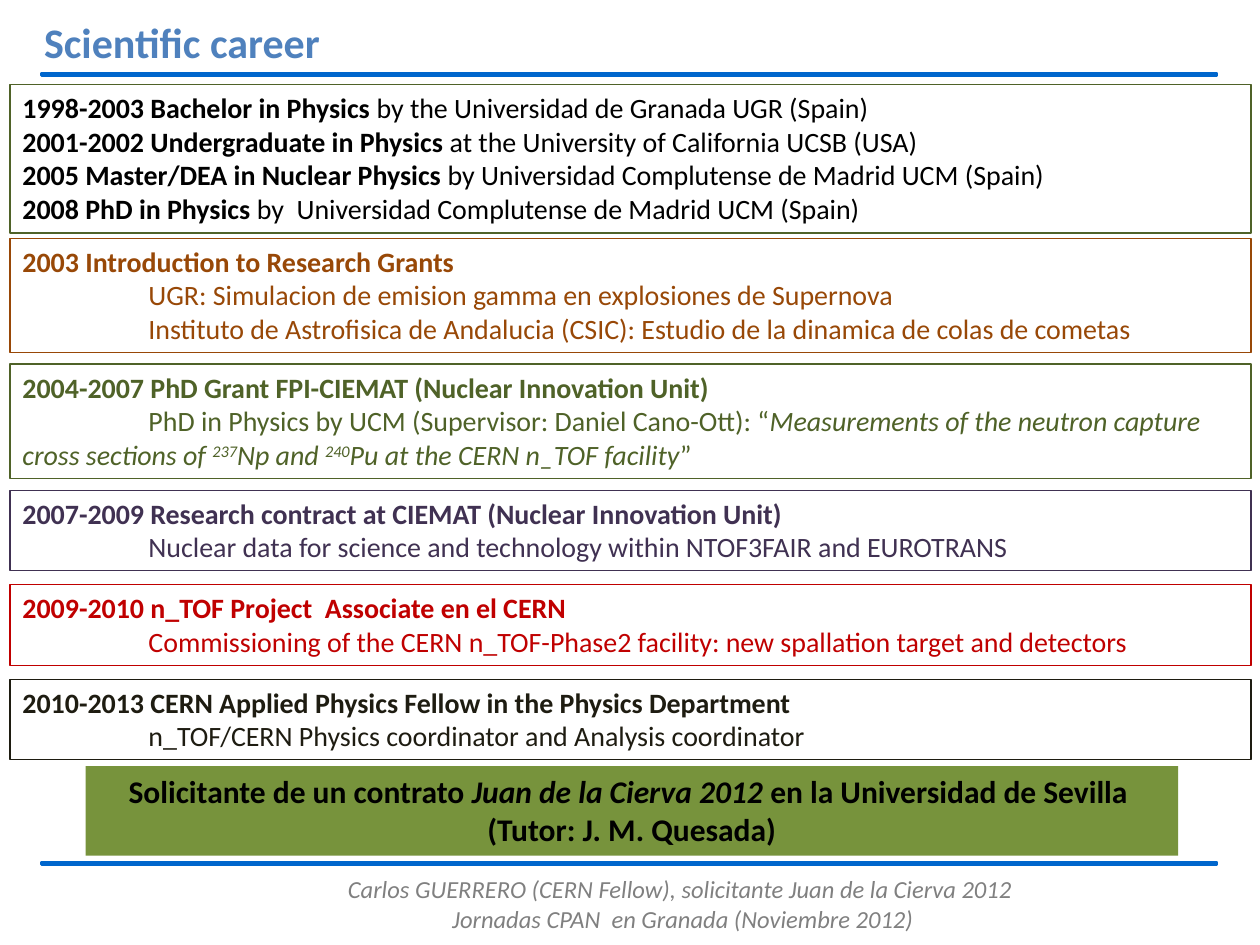
import pptx
import pptx.dml.color
import pptx.enum.shapes
import pptx.enum.text
import pptx.util

COLOURS = {
    "title": "4F81BD", "rule": "0066CC", "footer": "808080", "black": "000000",
    "green": "4F6228", "brown": "984807", "purple": "403152", "red": "C00000",
    "dark": "1E1C11", "banner": "77933C",
}
FORMATS = {
    "plain": {},
    "bold": {"bold": True},
    "italic": {"italic": True},
    "bold italic": {"bold": True, "italic": True},
    "raised": {"italic": True, "raised": True},
}
LEFT, CENTRE = pptx.enum.text.PP_ALIGN.LEFT, pptx.enum.text.PP_ALIGN.CENTER
RECTANGLE = pptx.enum.shapes.MSO_SHAPE.RECTANGLE

deck = pptx.Presentation()
deck.slide_width = pptx.util.Inches(10)
deck.slide_height = pptx.util.Inches(7.5)
page = deck.slides.add_slide(deck.slide_layouts[5])


def place(left, top, width, height):
    """Turn percentages of the slide's size into lengths."""
    sides = (deck.slide_width, deck.slide_height) * 2
    return [int(side * share / 100)
            for side, share in zip(sides, (left, top, width, height))]


def write(box, paragraphs, size, colour, align=LEFT, indented=False):
    """Fill a box with paragraphs of (text, format) spans; indent all but the first."""
    frame = box.text_frame
    frame.word_wrap = True
    frame.vertical_anchor = pptx.enum.text.MSO_ANCHOR.TOP
    for index, spans in enumerate(paragraphs):
        para = frame.add_paragraph() if index else frame.paragraphs[0]
        para.alignment = align
        para.space_before = pptx.util.Pt(0)
        if indented and index:
            para._p.get_or_add_pPr().set("indent", str(pptx.util.Inches(1)))
        for text, style in spans:
            span = para.add_run()
            span.text = text
            values = {"name": "Calibri", "size": pptx.util.Pt(size),
                      "bold": False, "italic": False} | FORMATS[style]
            if values.pop("raised", False):
                span.font._element.set("baseline", "30000")
            for attribute, value in values.items():
                setattr(span.font, attribute, value)
            span.font.color.rgb = pptx.dml.color.RGBColor.from_string(COLOURS[colour])


# Rules above and below the career boxes
for top in (7.73, 91.2):
    rule = page.shapes.add_shape(RECTANGLE, *place(3.3, top, 93.3, 0.27))
    rule.shadow.inherit = False
    rule.fill.solid()
    rule.fill.fore_color.rgb = pptx.dml.color.RGBColor.from_string(COLOURS["rule"])
    rule.line.color.rgb = pptx.dml.color.RGBColor.from_string(COLOURS["rule"])
    rule.line.width = pptx.util.Pt(1.5)

title = page.shapes.title
title.left, title.top, title.width, title.height = place(2.5, 1.07, 96.7, 6.67)
write(title, [[("Scientific career", "bold")]], 24, "title")

footer = page.shapes.add_textbox(*place(14.2, 91.87, 80, 8.27))
write(footer, [
    [("Carlos GUERRERO (CERN Fellow), solicitante Juan de la Cierva 2012 ", "italic")],
    [("Jornadas CPAN  en Granada (Noviembre 2012)", "italic")],
], 14, "footer", CENTRE)

# Top, height, line colour, text colour, indented, paragraphs
career = [
    (8.93, 15.73, "green", "black", False, [
        [("1998-2003 Bachelor in Physics", "bold"),
         (" by the Universidad de Granada UGR (Spain)", "plain")],
        [("2001-2002 Undergraduate in Physics", "bold"),
         (" at the University of California UCSB (USA)", "plain")],
        [("2005 Master/DEA in Nuclear Physics ", "bold"),
         ("by Universidad Complutense de Madrid UCM (Spain)", "plain")],
        [("2008 PhD in Physics ", "bold"),
         ("by  Universidad Complutense de Madrid UCM (Spain)", "plain")],
    ]),
    (25.2, 12.13, "brown", "brown", True, [
        [("2003 Introduction to Research Grants", "bold")],
        [("UGR: Simulacion de emision gamma en explosiones de Supernova", "plain")],
        [("Instituto de Astrofisica de Andalucia (CSIC): "
          "Estudio de la dinamica de colas de cometas", "plain")],
    ]),
    (38.53, 12.13, "green", "green", True, [
        [("2004-2007 PhD Grant FPI-CIEMAT (Nuclear Innovation Unit)", "bold")],
        [("PhD in Physics by UCM (Supervisor: Daniel Cano-Ott): “", "plain"),
         ("Measurements of the neutron capture cross sections of ", "italic"),
         ("237", "raised"), ("Np and ", "italic"),
         ("240", "raised"), ("Pu at the CERN n_TOF facility", "italic"),
         ("”", "plain")],
    ]),
    (51.87, 8.53, "purple", "purple", True, [
        [("2007-2009 Research contract at CIEMAT (Nuclear Innovation Unit)", "bold")],
        [("Nuclear data for science and technology within NTOF3FAIR and EUROTRANS",
          "plain")],
    ]),
    (61.87, 8.53, "red", "red", True, [
        [("2009-2010 n_TOF Project  Associate en el CERN", "bold")],
        [("Commissioning of the CERN n_TOF-Phase2 facility: "
          "new spallation target and detectors", "plain")],
    ]),
    (71.87, 8.53, "dark", "dark", True, [
        [("2010-2013 CERN Applied Physics Fellow in the Physics Department", "bold")],
        [("n_TOF/CERN Physics coordinator and Analysis coordinator", "plain")],
    ]),
]
for top, height, line_colour, text_colour, indented, paragraphs in career:
    box = page.shapes.add_shape(RECTANGLE, *place(0.8, top, 98.5, height))
    box.shadow.inherit = False
    box.fill.background()
    box.line.color.rgb = pptx.dml.color.RGBColor.from_string(COLOURS[line_colour])
    box.line.width = pptx.util.Pt(0.75)
    write(box, paragraphs, 16, text_colour, indented=indented)

banner = page.shapes.add_shape(RECTANGLE, *place(6.8, 81.07, 86.7, 9.47))
banner.shadow.inherit = False
banner.fill.solid()
banner.fill.fore_color.rgb = pptx.dml.color.RGBColor.from_string(COLOURS["banner"])
banner.line.fill.background()
write(banner, [
    [("Solicitante de un contrato ", "bold"),
     ("Juan de la Cierva 2012", "bold italic"),
     (" en la Universidad de Sevilla ", "bold")],
    [("(Tutor: J. M. Quesada)", "bold")],
], 18, "black", CENTRE)

deck.save("out.pptx")
